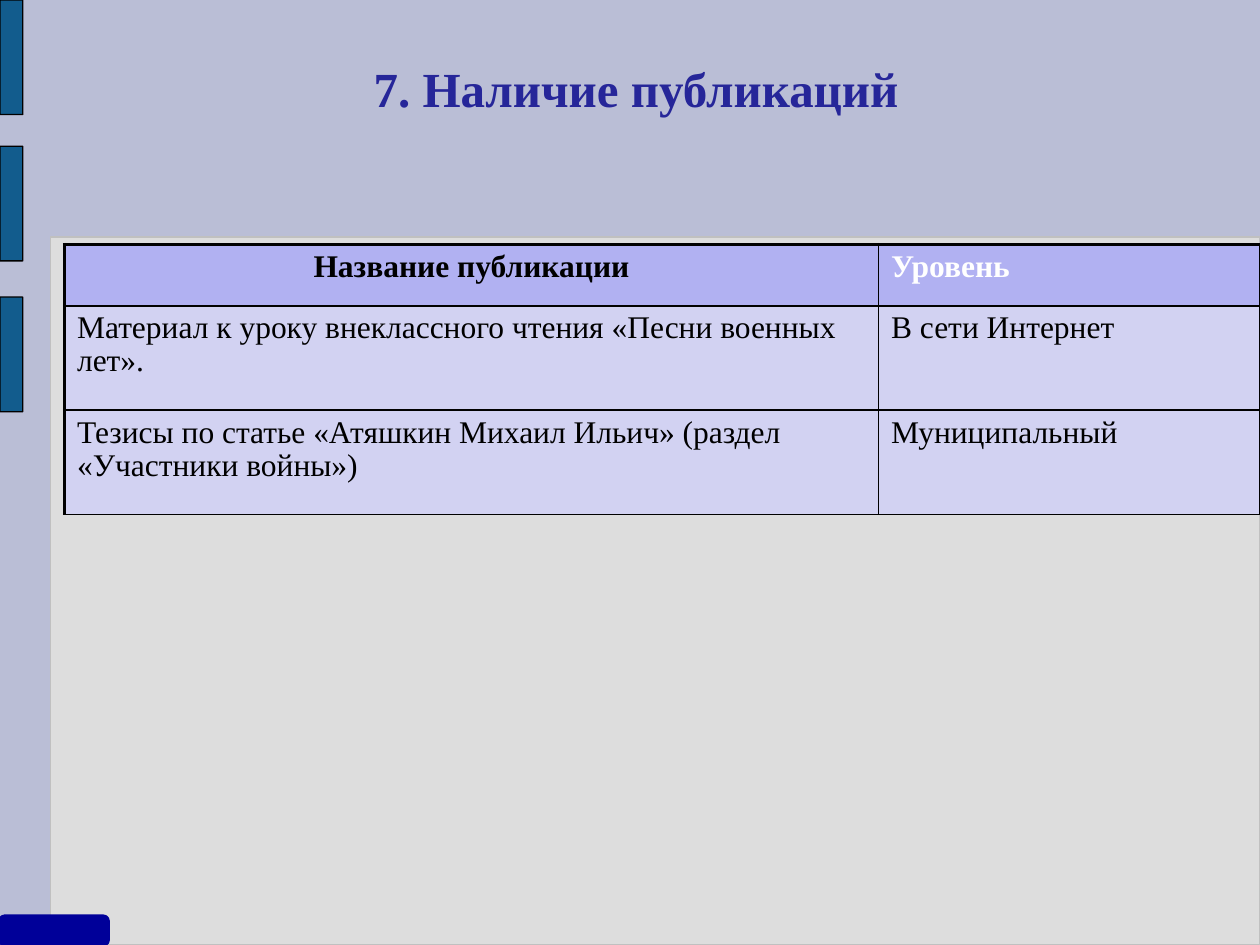
"""Build the slide that lists publications and their level."""
from dataclasses import dataclass

import lxml.etree
import pptx
import pptx.dml.color
import pptx.enum.dml
import pptx.enum.shapes
import pptx.enum.text
import pptx.oxml
import pptx.oxml.ns
import pptx.util

Cm, Pt = pptx.util.Cm, pptx.util.Pt
RGB = pptx.dml.color.RGBColor.from_string
ALIGN = pptx.enum.text.PP_ALIGN


@dataclass(frozen=True)
class Theme:
    font: str = "Times New Roman"
    background: str = "BABED6"
    panel: str = "DDDDDD"
    panel_line: str = "C0C0C0"
    bar: str = "125C8D"
    tab: str = "000099"
    title: str = "262699"
    ink: str = "000000"
    white: str = "FFFFFF"
    header_fill: str = "9999FF"
    body_fill: str = "CCCCFF"
    fill_alpha: int = 64
    title_size: float = 28
    table_size: float = 18
    thin: float = 1
    thick: float = 2.25


@dataclass(frozen=True)
class Block:
    left: float
    top: float
    width: float
    height: float
    fill: str
    line: str
    line_width: float = 0.75
    corner: float = 0


@dataclass(frozen=True)
class CellStyle:
    fill: str
    color: str
    bold: bool = False
    align: ALIGN = ALIGN.LEFT


THEME = Theme()
BLOCKS = [
    Block(1.02, 4.78, 24.38, 14.27, THEME.panel, THEME.panel_line),
    *(Block(0, top, 0.46, 2.31, THEME.bar, THEME.ink, corner=0.01) for top in (0, 2.95, 5.99)),
    Block(0, 18.47, 2.18, 0.58, THEME.tab, THEME.tab, 2, 0.17),
]
ROWS = [
    ("Название публикации", "Уровень"),
    ("Материал к уроку внеклассного чтения «Песни военных лет».", "В сети Интернет"),
    ("Тезисы по статье «Атяшкин Михаил Ильич» (раздел «Участники войны»)", "Муниципальный"),
]
COL_WIDTHS = (16.41, 7.7)
ROW_HEIGHTS = (1.24, 2.1, 2.1)
BODY = CellStyle(THEME.body_fill, THEME.ink)
HEADERS = (
    CellStyle(THEME.header_fill, THEME.ink, True, ALIGN.CENTER),
    CellStyle(THEME.header_fill, THEME.white, True),
)


def format_paragraph(p, size: float, color: str, bold: bool, align: ALIGN, spacing: float) -> None:
    p.alignment = align
    p.line_spacing = spacing
    p.font.name = THEME.font
    p.font.size = Pt(size)
    p.font.bold = bold
    p.font.color.rgb = RGB(color)


def draw_block(s, block: Block) -> None:
    sp = s.shapes.add_shape(
        pptx.enum.shapes.MSO_SHAPE.ROUNDED_RECTANGLE,
        Cm(block.left), Cm(block.top), Cm(block.width), Cm(block.height),
    )
    sp.adjustments[0] = block.corner
    sp.shadow.inherit = False
    sp.fill.solid()
    sp.fill.fore_color.rgb = RGB(block.fill)
    sp.line.color.rgb = RGB(block.line)
    sp.line.width = Pt(block.line_width)


def draw_title(s, text: str) -> None:
    sp = s.shapes.title
    sp.left, sp.top, sp.width, sp.height = Cm(2.11), Cm(0.33), Cm(21.67), Cm(3.02)
    tf = sp.text_frame
    tf.text = text
    tf.word_wrap = True
    tf.vertical_anchor = pptx.enum.text.MSO_ANCHOR.MIDDLE
    tf.margin_left = tf.margin_top = tf.margin_right = tf.margin_bottom = 0
    format_paragraph(tf.paragraphs[0], THEME.title_size, THEME.title, True, ALIGN.CENTER, 0.93)


def set_borders(cell, widths: dict[str, float]) -> None:
    props = cell._tc.get_or_add_tcPr()
    for i, (side, width) in enumerate(widths.items()):
        ns = pptx.oxml.ns.nsdecls("a")
        props.insert(i, pptx.oxml.parse_xml(
            f'<a:ln{side} {ns} w="{int(Pt(width))}"><a:solidFill>'
            f'<a:srgbClr val="{THEME.ink}"/></a:solidFill></a:ln{side}>'
        ))


def fill_cell(cell, text: str, style: CellStyle) -> None:
    cell.text = text
    p = cell.text_frame.paragraphs[0]
    format_paragraph(p, THEME.table_size, style.color, style.bold, style.align, 0.95)
    p.space_after = Pt(6)
    cell.fill.solid()
    cell.fill.fore_color.rgb = RGB(style.fill)
    color = cell._tc.tcPr.find(f".//{pptx.oxml.ns.qn('a:srgbClr')}")
    alpha = lxml.etree.SubElement(color, pptx.oxml.ns.qn("a:alpha"))
    alpha.set("val", str(THEME.fill_alpha * 1000))


def draw_table(s) -> None:
    table = s.shapes.add_table(
        len(ROWS), len(COL_WIDTHS), Cm(1.3), Cm(4.93),
        Cm(sum(COL_WIDTHS)), Cm(sum(ROW_HEIGHTS)),
    ).table
    table.first_row = table.horz_banding = False
    for column, width in zip(table.columns, COL_WIDTHS):
        column.width = Cm(width)
    for row, height in zip(table.rows, ROW_HEIGHTS):
        row.height = Cm(height)
    for i, texts in enumerate(ROWS):
        for j, text in enumerate(texts):
            cell = table.cell(i, j)
            fill_cell(cell, text, HEADERS[j] if i == 0 else BODY)
            set_borders(cell, {
                "L": THEME.thick if j == 0 else THEME.thin,
                "R": THEME.thick if j == len(texts) - 1 else THEME.thin,
                "T": THEME.thick if i == 0 else THEME.thin,
                "B": THEME.thin,
            })


def main() -> None:
    prs = pptx.Presentation()
    prs.slide_width, prs.slide_height = Cm(25.4), Cm(19.05)
    s = prs.slides.add_slide(prs.slide_layouts.get_by_name("Title Only"))
    s.background.fill.solid()
    s.background.fill.fore_color.rgb = RGB(THEME.background)
    for block in BLOCKS:
        draw_block(s, block)
    draw_table(s)
    draw_title(s, "7. Наличие публикаций ")
    prs.save("out.pptx")


if __name__ == "__main__":
    main()
